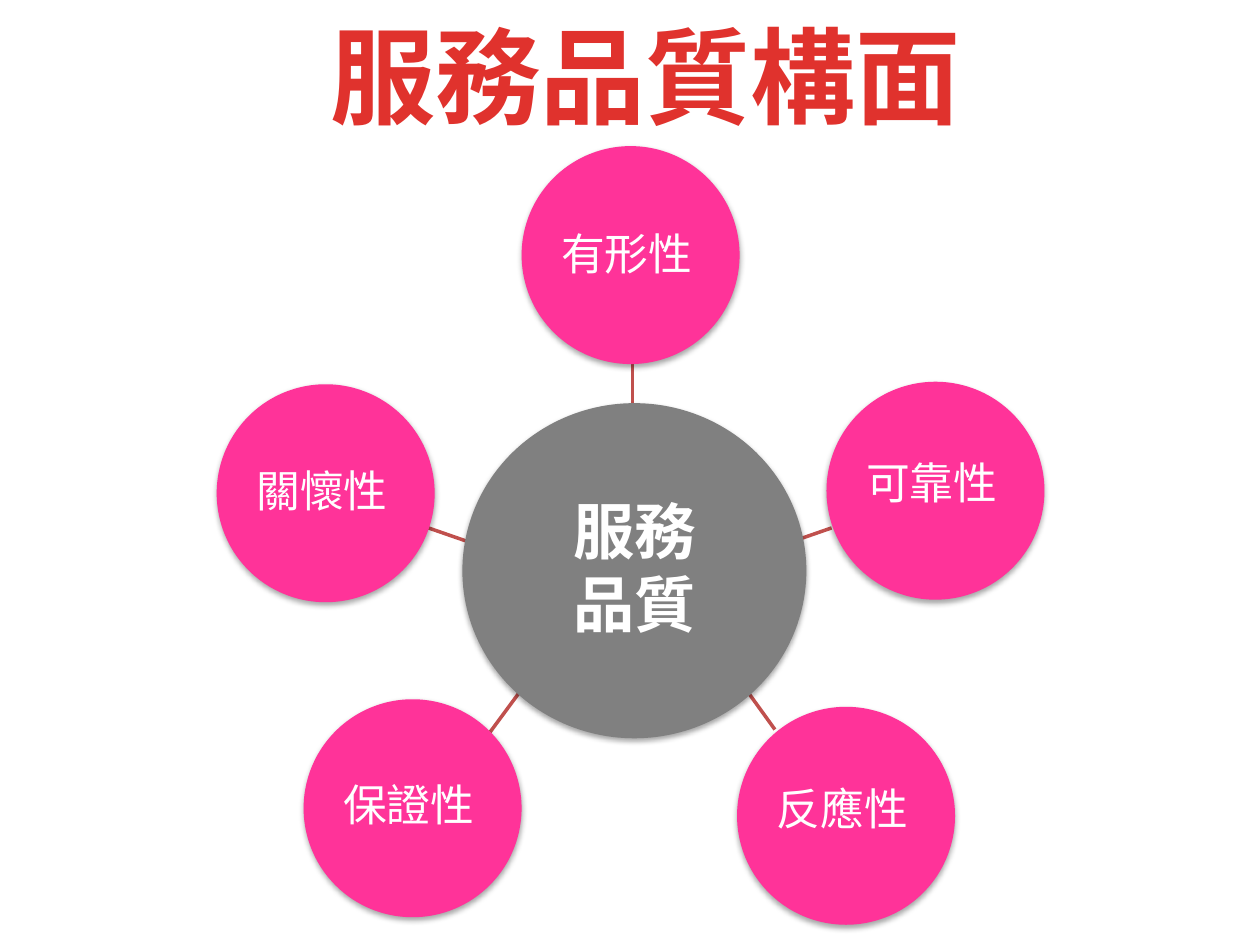
from lxml import etree
from pptx import Presentation
from pptx.dml.color import RGBColor
from pptx.enum.shapes import MSO_CONNECTOR, MSO_SHAPE
from pptx.enum.text import MSO_ANCHOR, MSO_AUTO_SIZE, PP_ALIGN
from pptx.oxml import parse_xml
from pptx.oxml.ns import nsdecls, qn
from pptx.util import Inches, Pt

STRAIGHT = MSO_CONNECTOR.STRAIGHT
OVAL = MSO_SHAPE.OVAL
MIDDLE = MSO_ANCHOR.MIDDLE
NO_AUTOFIT = MSO_AUTO_SIZE.NONE
CENTER = PP_ALIGN.CENTER

FONT = "Noto Sans CJK SC"
RED = RGBColor(0xE0, 0x32, 0x2D)
BRICK = RGBColor(0xC0, 0x50, 0x4D)
PINK = RGBColor(0xFF, 0x33, 0x99)
GRAY = RGBColor(0x80, 0x80, 0x80)
WHITE = RGBColor(0xFF, 0xFF, 0xFF)

SHADOW = (
    f'<a:effectLst {nsdecls("a")}>'
    '<a:outerShdw blurRad="40000" dist="23000" dir="5400000" rotWithShape="0">'
    '<a:srgbClr val="000000"><a:alpha val="35000"/></a:srgbClr>'
    '</a:outerShdw></a:effectLst>'
)


def write_text(shape, lines, size, color, bold):
    """Fill a shape with centred lines in the deck's font."""
    frame = shape.text_frame
    frame.word_wrap = True
    frame.auto_size = NO_AUTOFIT
    frame.vertical_anchor = MIDDLE
    frame.text = "\n".join(lines)
    for para in frame.paragraphs:
        para.alignment = CENTER
        para.font.name = FONT
        para.font.size = Pt(size)
        para.font.bold = bold
        para.font.color.rgb = color
        # East Asian typeface
        properties = para._p.pPr.find(qn("a:defRPr"))
        etree.SubElement(properties, qn("a:ea"), typeface=FONT)


def add_circle(circle_at, label_at, color, lines, size, bold):
    """Draw a shadowed circle and its label."""
    circle = slide.shapes.add_shape(OVAL, *map(Inches, circle_at))
    circle.fill.solid()
    circle.fill.fore_color.rgb = color
    circle.line.fill.background()
    circle._element.spPr.append(parse_xml(SHADOW))

    label = slide.shapes.add_textbox(*map(Inches, label_at))
    write_text(label, lines, size, WHITE, bold)
    frame = label.text_frame
    frame.margin_left = frame.margin_right = Inches(0.02)
    frame.margin_top = frame.margin_bottom = Inches(0.02)
    for para in frame.paragraphs:
        para.line_spacing = 0.9
    for para in frame.paragraphs[:-1]:
        para.space_after = Pt(4)


deck = Presentation()
deck.slide_width = Inches(10)
deck.slide_height = Inches(7.5)
slide = deck.slides.add_slide(deck.slide_layouts[5])

# Title
title = slide.shapes.title
title.left, title.top = Inches(0.59), Inches(0.05)
title.width, title.height = Inches(9.06), Inches(1.09)
write_text(title, ["服務品質構面"], 60, RED, True)

# Spokes from the hub to each dimension
spokes = [
    (5.84, 5.36, 6.15, 5.79),
    (6.11, 4.36, 6.6, 4.19),
    (3.89, 4.36, 3.4, 4.19),
    (5.02, 3.28, 5.02, 2.76),
    (4.2, 5.39, 3.89, 5.81),
]
for ends in spokes:
    spoke = slide.shapes.add_connector(STRAIGHT, *map(Inches, ends))
    spoke.line.color.rgb = BRICK
    spoke.line.width = Pt(2)
    etree.SubElement(spoke._element.spPr, qn("a:effectLst"))

# Dimensions: name, circle left and top, label top and height
DIAMETER = 1.73
dimensions = [
    ("可靠性", 6.56, 3.03, 3.28, 1.15),
    ("有形性", 4.14, 1.16, 1.49, 1.09),
    ("反應性", 5.85, 5.61, 5.86, 1.15),
    ("保證性", 2.41, 5.55, 5.86, 1.09),
    ("關懷性", 1.72, 3.05, 3.3, 1.23),
]
for name, left, top, label_top, label_height in dimensions:
    add_circle((left, top, DIAMETER, DIAMETER),
               (left + 0.25, label_top, 1.17, label_height),
               PINK, [name], 25, False)

# Hub
add_circle((3.67, 3.2, 2.73, 2.66), (4.07, 3.59, 1.93, 1.88),
           GRAY, ["服務", "品質"], 35, True)

deck.save("out.pptx")
